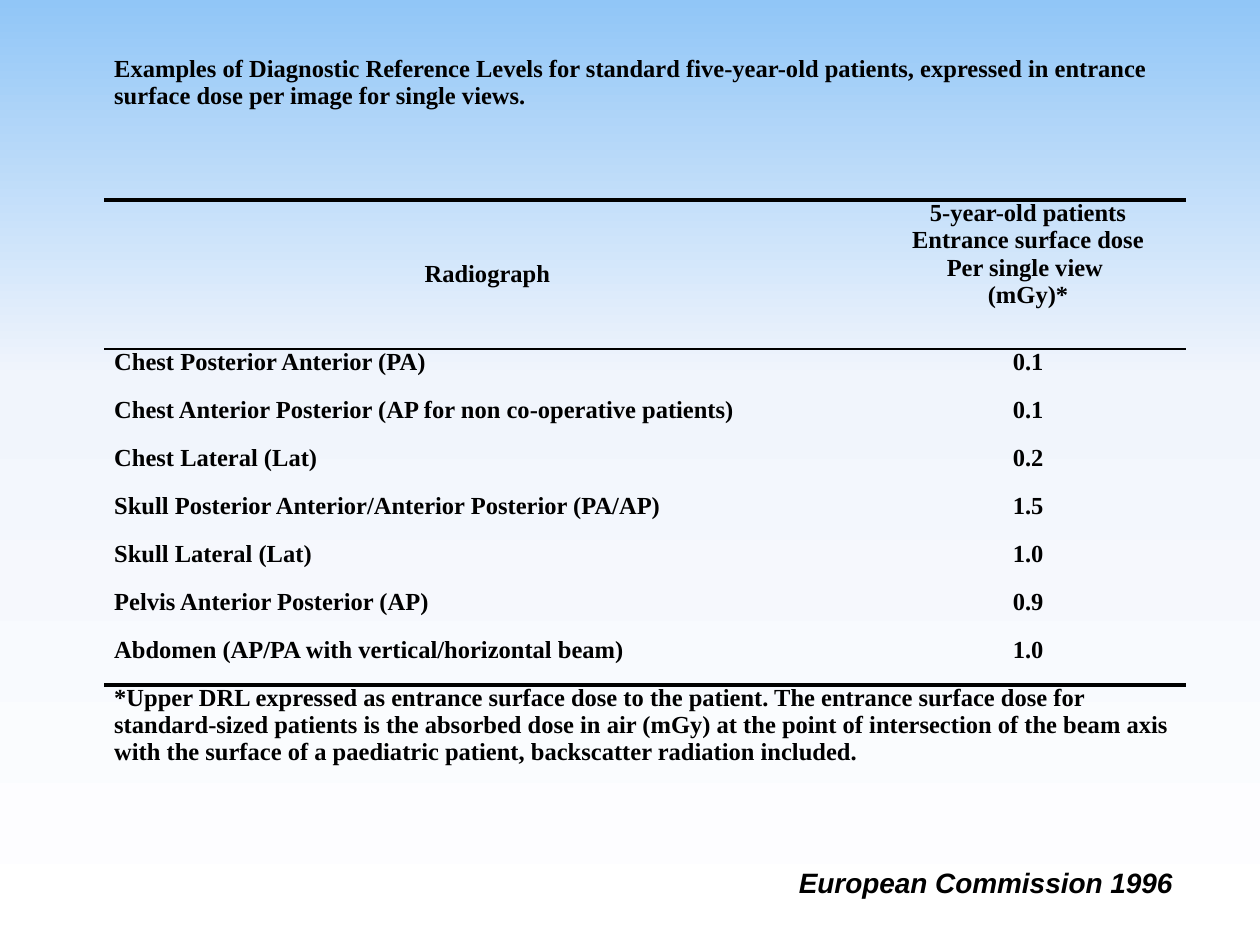
from dataclasses import dataclass

from lxml.etree import SubElement
from pptx import Presentation
from pptx.dml.color import RGBColor
from pptx.enum.text import MSO_ANCHOR, PP_ALIGN
from pptx.oxml.ns import qn
from pptx.util import Pt


@dataclass(frozen=True)
class Theme:
    """Colours, fonts and type sizes of the slide."""
    ink: str = "000000"
    gradient: tuple = ((0, "91C6F7"), (40, "F1F5FC"), (100, "FFFFFF"))
    table_font: str = "Times New Roman"
    table_size: float = 14
    source_font: str = "Arial"
    source_size: float = 16
    thick: float = 2.25
    thin: float = 1


THEME = Theme()
TITLE = ("Examples of Diagnostic Reference Levels for standard five-year-old patients, "
         "expressed in entrance surface dose per image for single views.")
HEADINGS = ("Radiograph",
            "5-year-old patients\nEntrance surface dose\nPer single view \n(mGy)*")
DOSES = (
    ("Chest Posterior Anterior (PA)", "0.1"),
    ("Chest Anterior Posterior (AP for non co-operative patients)", "0.1"),
    ("Chest Lateral (Lat)", "0.2"),
    ("Skull Posterior Anterior/Anterior Posterior (PA/AP)", "1.5"),
    ("Skull Lateral (Lat)", "1.0"),
    ("Pelvis Anterior Posterior (AP)", "0.9"),
    ("Abdomen (AP/PA with vertical/horizontal beam)", "1.0"),
)
FOOTNOTE = ("*Upper DRL expressed as entrance surface dose to the patient. The entrance "
            "surface dose for standard-sized patients is the absorbed dose in air (mGy) at "
            "the point of intersection of the beam axis with the surface of a paediatric "
            "patient, backscatter radiation included.")
COLUMN_WIDTHS = (438, 180)
ROW_HEIGHTS = (82.3, 85.2, *[27.43] * len(DOSES), 82)


def paint_background(page):
    """Fill the page with the vertical gradient."""
    fill = page.background.fill
    fill.gradient()
    fill.gradient_angle = 270
    stops = page.background._cSld.find(".//" + qn("a:gsLst"))
    for stop in list(stops):
        stops.remove(stop)
    for percent, colour in THEME.gradient:
        stop = SubElement(stops, qn("a:gs"), pos=str(percent * 1000))
        SubElement(stop, qn("a:srgbClr"), val=colour)


def style_text(frame, align, font_name, size, italic=False):
    """Align the paragraphs of a frame and format their runs."""
    for para in frame.paragraphs:
        para.alignment = align
        for span in para.runs:
            span.font.name = font_name
            span.font.size = Pt(size)
            span.font.bold = True
            span.font.italic = italic
            span.font.color.rgb = RGBColor.from_string(THEME.ink)


def set_borders(cell, top, bottom):
    """Draw the rules above and below a cell and leave its sides open."""
    properties = cell._tc.get_or_add_tcPr()
    for tag, width in (("a:lnL", 0), ("a:lnR", 0), ("a:lnT", top), ("a:lnB", bottom)):
        line = SubElement(properties, qn(tag), w=str(Pt(width)))
        if width:
            fill = SubElement(line, qn("a:solidFill"))
            SubElement(fill, qn("a:srgbClr"), val=THEME.ink)
        else:
            SubElement(line, qn("a:noFill"))


def fill_cell(cell, text, align, top, bottom):
    """Write one transparent table cell with its rules."""
    cell.margin_left = cell.margin_right = Pt(5.76)
    cell.margin_top = cell.margin_bottom = Pt(0)
    set_borders(cell, top, bottom)
    cell.fill.background()
    cell.text_frame.text = text
    style_text(cell.text_frame, align, THEME.table_font, THEME.table_size)


def add_dose_table(page):
    """Add the table of reference levels with its title and footnote rows."""
    rows = ((TITLE, ""), HEADINGS, *DOSES, (FOOTNOTE, ""))
    last = len(rows) - 1
    rules = {1: THEME.thick, 2: THEME.thin, last: THEME.thick}
    table = page.shapes.add_table(len(rows), 2, Pt(59.5), Pt(32),
                                  Pt(sum(COLUMN_WIDTHS)), Pt(sum(ROW_HEIGHTS))).table
    table.first_row = table.horz_banding = False
    for column, width in zip(table.columns, COLUMN_WIDTHS):
        column.width = Pt(width)
    for index, (texts, height) in enumerate(zip(rows, ROW_HEIGHTS)):
        table.rows[index].height = Pt(height)
        for position, text in enumerate(texts):
            centred = index == 1 or position == 1
            align = PP_ALIGN.CENTER if centred else PP_ALIGN.LEFT
            fill_cell(table.cell(index, position), text, align,
                      rules.get(index, 0), rules.get(index + 1, 0))
    table.cell(1, 0).vertical_anchor = MSO_ANCHOR.MIDDLE
    for index in (0, last):
        table.cell(index, 0).merge(table.cell(index, 1))


def add_source(page):
    """Add the source line at the lower right."""
    box = page.shapes.add_textbox(Pt(427.7), Pt(491), Pt(244), Pt(28))
    frame = box.text_frame
    frame.word_wrap = False
    frame.margin_left, frame.margin_right = Pt(0), Pt(1.44)
    frame.text = "European Commission 1996"
    style_text(frame, PP_ALIGN.RIGHT, THEME.source_font, THEME.source_size, italic=True)


def main():
    """Build the slide and save it."""
    deck = Presentation()
    deck.slide_width, deck.slide_height = Pt(720), Pt(540)
    page = deck.slides.add_slide(deck.slide_layouts[6])
    paint_background(page)
    add_dose_table(page)
    add_source(page)
    deck.save("out.pptx")


if __name__ == "__main__":
    main()
